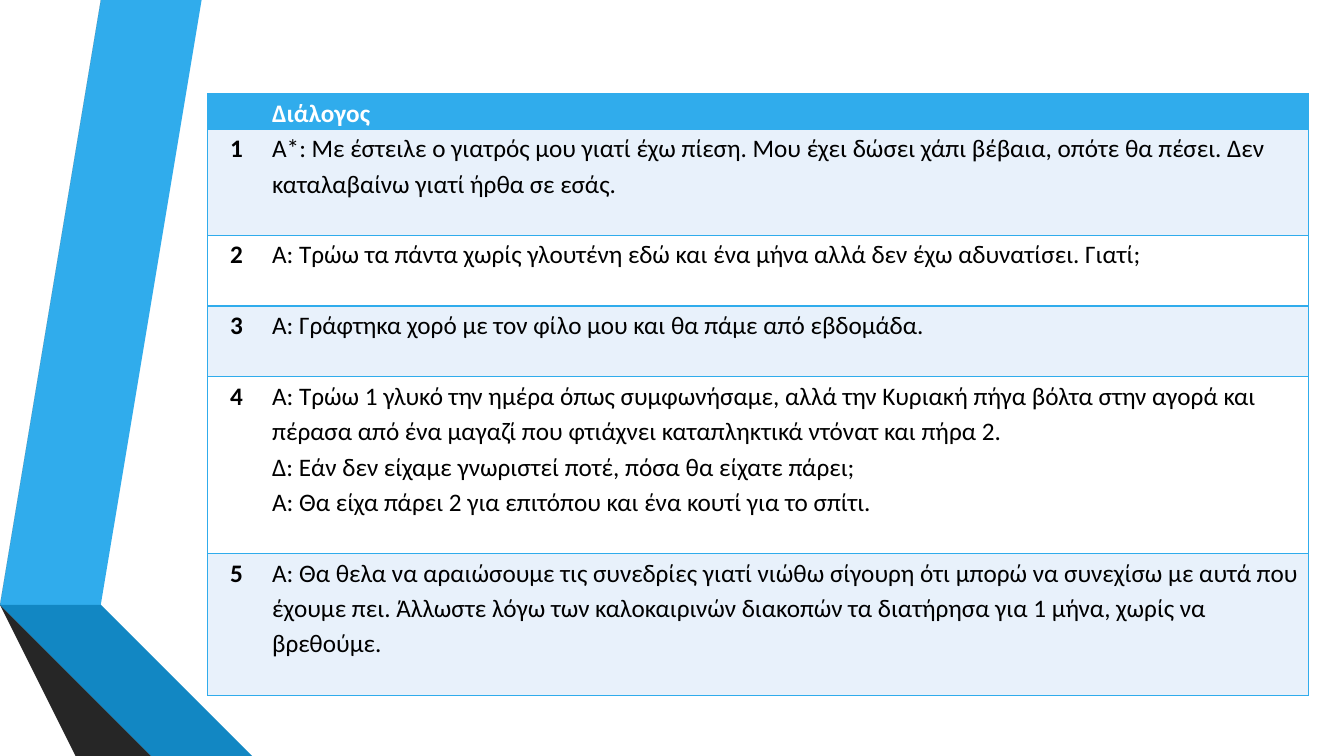
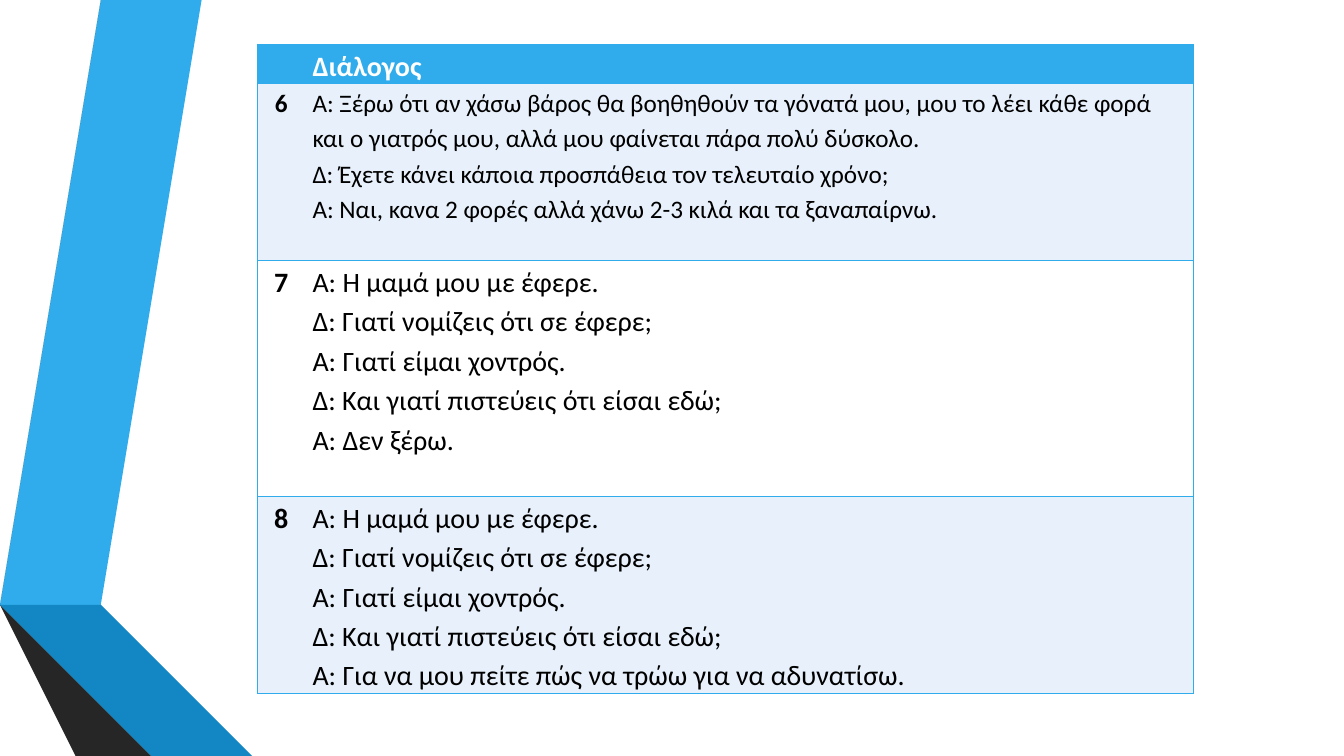
from lxml.etree import SubElement
from pptx import Presentation
from pptx.dml.color import RGBColor
from pptx.enum.text import PP_ALIGN as Align
from pptx.oxml.ns import qn
from pptx.util import Inches, Pt

SLIDE_W, SLIDE_H = 13.33, 7.5
FONT = "Calibri"
LINE_SPACING = 1.15
LINE_HEIGHT = 0.0195  # inches per point of text size, spacing included
SIDE_MARGIN = 0.07
NO_GRID_STYLE = "{2D5ABB26-0587-4C30-8999-92F81FD0307C}"

WHITE = RGBColor(0xFF, 0xFF, 0xFF)
BLACK = RGBColor(0x00, 0x00, 0x00)
SKY = RGBColor(0x30, 0xAC, 0xEC)
BLUE = RGBColor(0x12, 0x87, 0xC3)
NAVY = RGBColor(0x0C, 0x5A, 0x82)
PALE = RGBColor(0xE8, 0xF1, 0xFB)
GREY = RGBColor(0x59, 0x59, 0x59)
DARK_GREY = RGBColor(0x40, 0x40, 0x40)
CHARCOAL = RGBColor(0x26, 0x26, 0x26)

# Folded ribbons along the left edge, from back to front
RIBBONS = [
    (SKY, [(0.5, 5.78), (0.77, 5.83), (1.73, 0), (1.45, 0)]),
    (GREY, [(1.39, 0), (1.11, 0), (0.16, 5.73), (0.44, 5.77)]),
    (CHARCOAL, [(0.16, 5.73), (1.45, SLIDE_H), (1.51, SLIDE_H)]),
    (NAVY, [(0.5, 5.79), (2.08, SLIDE_H), (2.14, SLIDE_H)]),
    (BLUE, [(0.5, 5.79), (2.14, SLIDE_H), (2.83, SLIDE_H), (0.77, 5.83), (0.5, 5.78)]),
    (DARK_GREY, [(2.02, SLIDE_H), (0.48, 5.83), (0.43, 5.77), (0.16, 5.73), (1.51, SLIDE_H)]),
]

HEADING = "Διάλογος"

# Each dialogue: number, text size, height in text lines, spoken lines
FIRST_DIALOGUES = [
    ("1", 18, 3, ["Α*: Με έστειλε ο γιατρός μου γιατί έχω πίεση. Μου έχει δώσει χάπι βέβαια, "
                  "οπότε θα πέσει. Δεν καταλαβαίνω γιατί ήρθα σε εσάς."]),
    ("2", 18, 2, ["Α: Τρώω τα πάντα χωρίς γλουτένη εδώ και ένα μήνα αλλά δεν έχω αδυνατίσει. Γιατί;"]),
    ("3", 18, 2, ["Α: Γράφτηκα χορό με τον φίλο μου και θα πάμε από εβδομάδα."]),
    ("4", 18, 5, ["Α: Τρώω 1 γλυκό την ημέρα όπως συμφωνήσαμε, αλλά την Κυριακή πήγα βόλτα στην "
                  "αγορά και πέρασα από ένα μαγαζί που φτιάχνει καταπληκτικά ντόνατ και πήρα 2.",
                  "Δ: Εάν δεν είχαμε γνωριστεί ποτέ, πόσα θα είχατε πάρει;",
                  "Α: Θα είχα πάρει 2 για επιτόπου και ένα κουτί για το σπίτι."]),
    ("5", 18, 4, ["Α: Θα θελα να αραιώσουμε τις συνεδρίες γιατί νιώθω σίγουρη ότι μπορώ να συνεχίσω "
                  "με αυτά που έχουμε πει. Άλλωστε λόγω των καλοκαιρινών διακοπών τα διατήρησα για "
                  "1 μήνα, χωρίς να βρεθούμε."]),
]

CHILD_OPENING = [
    "Α: Η μαμά μου με έφερε.",
    "Δ: Γιατί νομίζεις ότι σε έφερε;",
    "Α: Γιατί είμαι χοντρός.",
    "Δ: Και γιατί πιστεύεις ότι είσαι εδώ;",
]
SECOND_DIALOGUES = [
    ("6", 18, 5, ["Α: Ξέρω ότι αν χάσω βάρος θα βοηθηθούν τα γόνατά μου, μου το λέει κάθε φορά "
                  "και ο γιατρός μου, αλλά μου φαίνεται πάρα πολύ δύσκολο.",
                  "Δ: Έχετε κάνει κάποια προσπάθεια τον τελευταίο χρόνο;",
                  "Α: Ναι, κανα 2 φορές αλλά χάνω 2-3 κιλά και τα ξαναπαίρνω."]),
    ("7", 20, 6, CHILD_OPENING + ["Α: Δεν ξέρω."]),
    ("8", 20, 5, CHILD_OPENING + ["Α: Για να μου πείτε πώς να τρώω για να αδυνατίσω."]),
]


def add_ribbons(slide):
    for color, corners in RIBBONS:
        outline = slide.shapes.build_freeform(*corners[0], scale=Inches(1))
        outline.add_line_segments(corners[1:], close=True)
        ribbon = outline.convert_to_shape()
        ribbon.shadow.inherit = False
        ribbon.fill.solid()
        ribbon.fill.fore_color.rgb = color
        ribbon.line.fill.background()


def add_borders(cell, sides):
    for side in sides:
        border = SubElement(cell._tc.get_or_add_tcPr(), qn(f"a:ln{side}"), w=str(Pt(1)))
        fill = SubElement(border, qn("a:solidFill"))
        SubElement(fill, qn("a:srgbClr"), val=str(SKY))


def fill_cell(cell, lines, size, background, color, bold, align, sides):
    add_borders(cell, sides)
    cell.fill.solid()
    cell.fill.fore_color.rgb = background
    cell.margin_left = cell.margin_right = Inches(SIDE_MARGIN)
    cell.margin_top = cell.margin_bottom = 0
    cell.text_frame.text = "\n".join(lines)
    for paragraph in cell.text_frame.paragraphs:
        paragraph.alignment = align
        paragraph.line_spacing = LINE_SPACING
        for run in paragraph.runs:
            run.font.name, run.font.size = FONT, Pt(size)
            run.font.bold, run.font.color.rgb = bold, color


def add_dialogue_table(slide, left, top, widths, heading_size, dialogues):
    entries = [("", heading_size, 1, [HEADING])] + dialogues
    heights = [Inches(size * LINE_HEIGHT * count) for _, size, count, _ in entries]
    table = slide.shapes.add_table(len(entries), 2, Inches(left), Inches(top),
                                   Inches(sum(widths)), sum(heights)).table
    table.horz_banding = False
    table._tbl.tblPr.find(qn("a:tableStyleId")).text = NO_GRID_STYLE
    for column, width in zip(table.columns, widths):
        column.width = Inches(width)
    for index, (number, size, _, lines) in enumerate(entries):
        table.rows[index].height = heights[index]
        is_heading = index == 0
        background = SKY if is_heading else PALE if index % 2 else WHITE
        color = WHITE if is_heading else BLACK
        fill_cell(table.cell(index, 0), [number], size, background, color,
                  True, Align.CENTER, "LTB")
        fill_cell(table.cell(index, 1), lines, size, background, color,
                  is_heading, Align.LEFT, "RTB")


def add_dialogue_slide(deck, *table_layout):
    slide = deck.slides.add_slide(deck.slide_layouts[6])
    add_ribbons(slide)
    add_dialogue_table(slide, *table_layout)


def main():
    deck = Presentation()
    deck.slide_width, deck.slide_height = Inches(SLIDE_W), Inches(SLIDE_H)
    add_dialogue_slide(deck, 2.06, 0.93, (0.57, 10.35), 18, FIRST_DIALOGUES)
    add_dialogue_slide(deck, 2.55, 0.44, (0.48, 8.81), 20, SECOND_DIALOGUES)
    deck.save("out.pptx")


if __name__ == "__main__":
    main()
